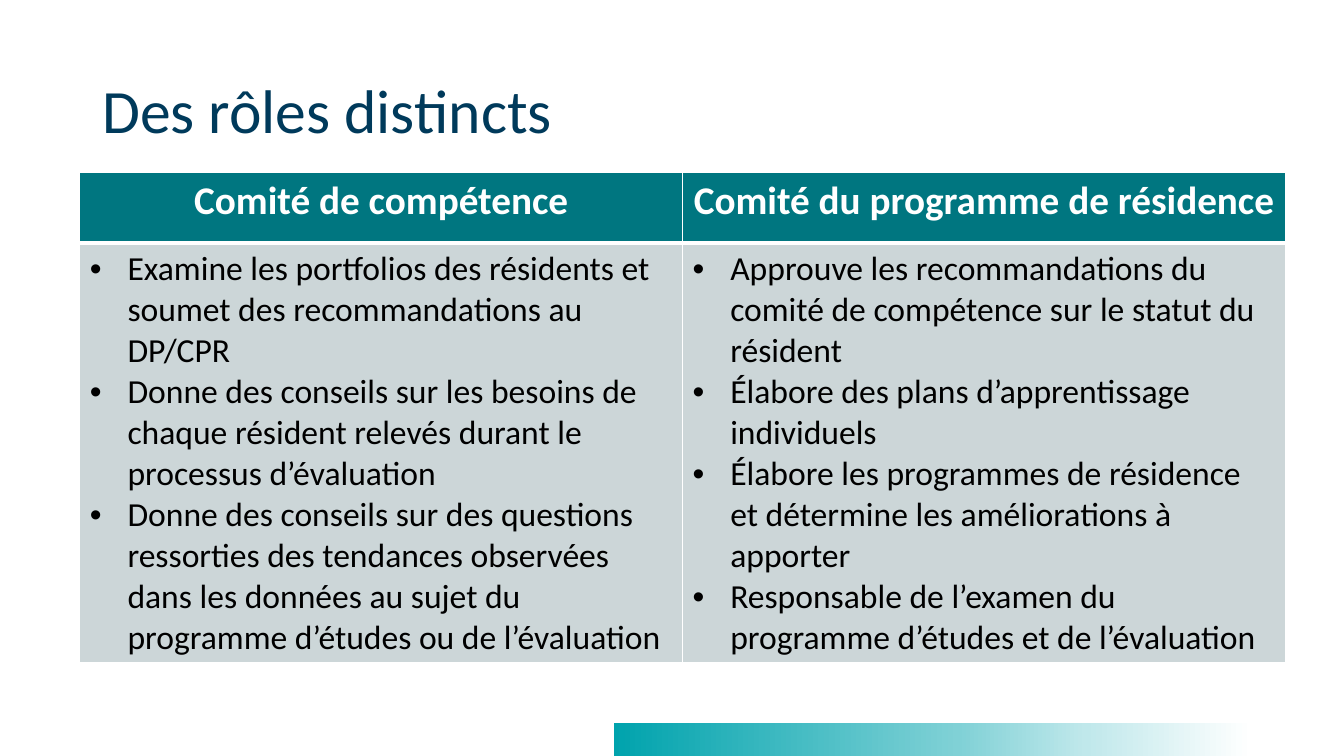
from lxml import etree
from pptx import Presentation
from pptx.dml.color import RGBColor
from pptx.enum.shapes import MSO_SHAPE
from pptx.enum.text import MSO_ANCHOR, PP_ALIGN
from pptx.oxml.ns import qn
from pptx.util import Cm, Pt

RECTANGLE = MSO_SHAPE.RECTANGLE
MIDDLE = MSO_ANCHOR.MIDDLE
CENTER = PP_ALIGN.CENTER

TITLE = "Des rôles distincts"
COMMITTEES = {
    "Comité de compétence": [
        "Examine les portfolios des résidents et soumet des recommandations au DP/CPR",
        "Donne des conseils sur les besoins de chaque résident relevés durant le processus d’évaluation",
        "Donne des conseils sur des questions ressorties des tendances observées dans les données "
        "au sujet du programme d’études ou de l’évaluation",
    ],
    "Comité du programme de résidence": [
        "Approuve les recommandations du comité de compétence sur le statut du résident",
        "Élabore des plans d’apprentissage individuels",
        "Élabore les programmes de résidence et détermine les améliorations à apporter",
        "Responsable de l’examen du programme d’études et de l’évaluation",
    ],
}

THEME = {
    "font": "Calibri",
    "title": ("003A5B", 44),
    "heading": ("FFFFFF", 28),
    "role": ("000000", 24),
    "heading_fill": "007680",
    "role_fill": "CCD6D8",
    "border": "FFFFFF",
    "band": [(0, "00A3AD"), (54, "80D1D6"), (74, "C0E8EB"), (100, "FFFFFF")],
}
COLUMN_WIDTH = Cm(15.19)
ROW_HEIGHTS = (Cm(1.78), Cm(10.57))
BULLET_INDENT = Cm(0.95)


def style(paragraph, part, bold=False):
    color, size = THEME[part]
    paragraph.font.name = THEME["font"]
    paragraph.font.size = Pt(size)
    paragraph.font.bold = bold
    paragraph.font.color.rgb = RGBColor.from_string(color)


def add_color(parent, color):
    etree.SubElement(parent, qn("a:srgbClr"), val=color)


def add_bullet(paragraph):
    properties = paragraph._p.get_or_add_pPr()
    properties.set("marL", str(BULLET_INDENT))
    properties.set("indent", str(-BULLET_INDENT))
    etree.SubElement(properties, qn("a:buFont"), typeface="Arial")
    etree.SubElement(properties, qn("a:buChar"), char="•")


def dress_cell(cell, fill, top, bottom):
    """Fill a cell and border it; top and bottom are line widths in points."""
    cell.fill.solid()
    cell.fill.fore_color.rgb = RGBColor.from_string(fill)
    properties = cell._tc.get_or_add_tcPr()
    for place, (side, width) in enumerate((("L", 1), ("R", 1), ("T", top), ("B", bottom))):
        line = etree.Element(qn(f"a:ln{side}"), w=str(Pt(width)))
        add_color(etree.SubElement(line, qn("a:solidFill")), THEME["border"])
        properties.insert(place, line)


def add_band(slide):
    band = slide.shapes.add_shape(RECTANGLE, Cm(15.47), Cm(18.21), Cm(16.08), Cm(0.84))
    band.shadow.inherit = False
    band.line.fill.background()
    band.fill.gradient()
    band.fill.gradient_angle = 0
    stops = band._element.spPr.find(qn("a:gradFill")).find(qn("a:gsLst"))
    for stop in list(stops):
        stops.remove(stop)
    for percent, color in THEME["band"]:
        add_color(etree.SubElement(stops, qn("a:gs"), pos=str(percent * 1000)), color)


def add_title(slide):
    frame = slide.shapes.add_textbox(Cm(2.33), Cm(1.01), Cm(29.21), Cm(3.68)).text_frame
    frame.word_wrap = True
    frame.vertical_anchor = MIDDLE
    paragraph = frame.paragraphs[0]
    paragraph.text = TITLE
    paragraph.line_spacing = 0.9
    style(paragraph, "title")


def add_committees(slide):
    table = slide.shapes.add_table(
        len(ROW_HEIGHTS), len(COMMITTEES), Cm(2.01), Cm(4.35),
        COLUMN_WIDTH * len(COMMITTEES), sum(ROW_HEIGHTS)).table
    for row, height in zip(table.rows, ROW_HEIGHTS):
        row.height = height
    for column, (committee, roles) in enumerate(COMMITTEES.items()):
        table.columns[column].width = COLUMN_WIDTH
        heading, body = table.cell(0, column), table.cell(1, column)
        dress_cell(heading, THEME["heading_fill"], top=1, bottom=3)
        dress_cell(body, THEME["role_fill"], top=3, bottom=1)
        heading.text = committee
        heading_line = heading.text_frame.paragraphs[0]
        heading_line.alignment = CENTER
        style(heading_line, "heading", bold=True)
        body.text = "\n".join(roles)
        for paragraph in body.text_frame.paragraphs:
            add_bullet(paragraph)
            style(paragraph, "role")


def main():
    deck = Presentation()
    deck.slide_width, deck.slide_height = Cm(33.87), Cm(19.05)
    slide = deck.slides.add_slide(deck.slide_layouts[6])
    add_band(slide)
    add_title(slide)
    add_committees(slide)
    deck.save("out.pptx")


if __name__ == "__main__":
    main()
